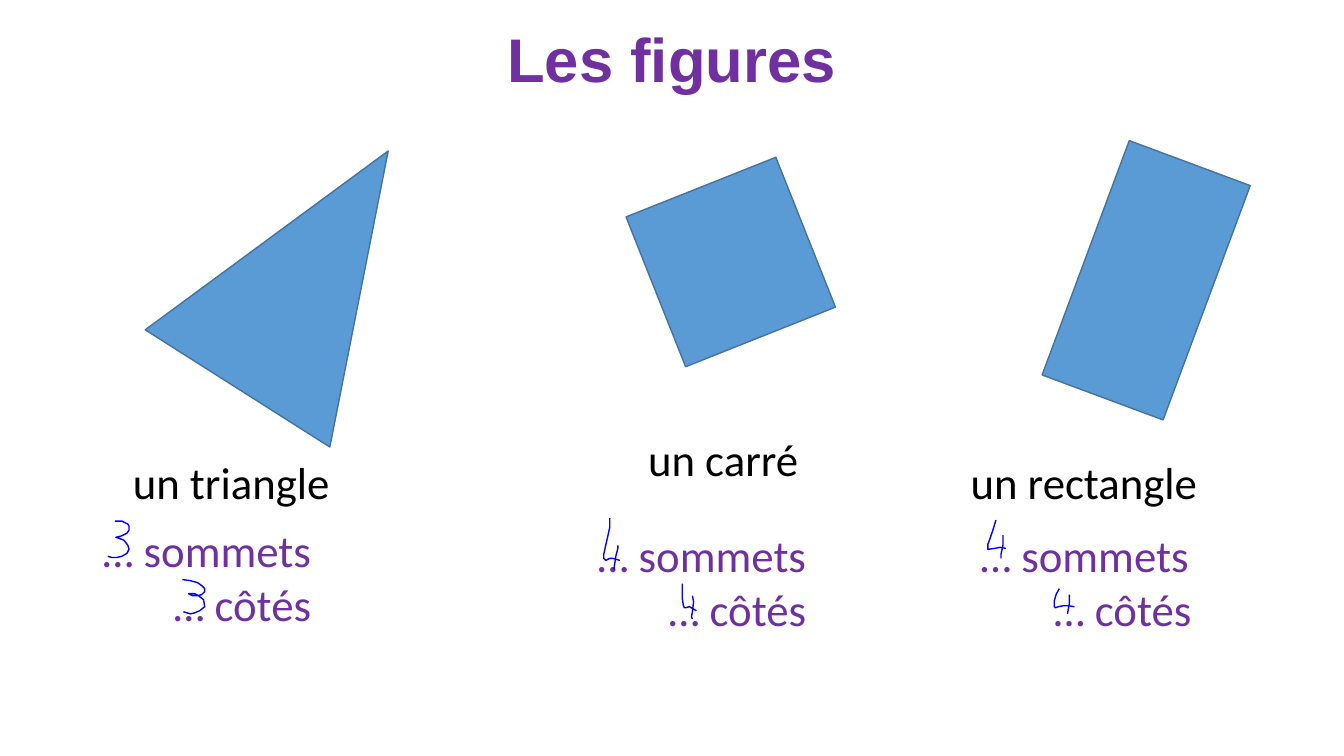
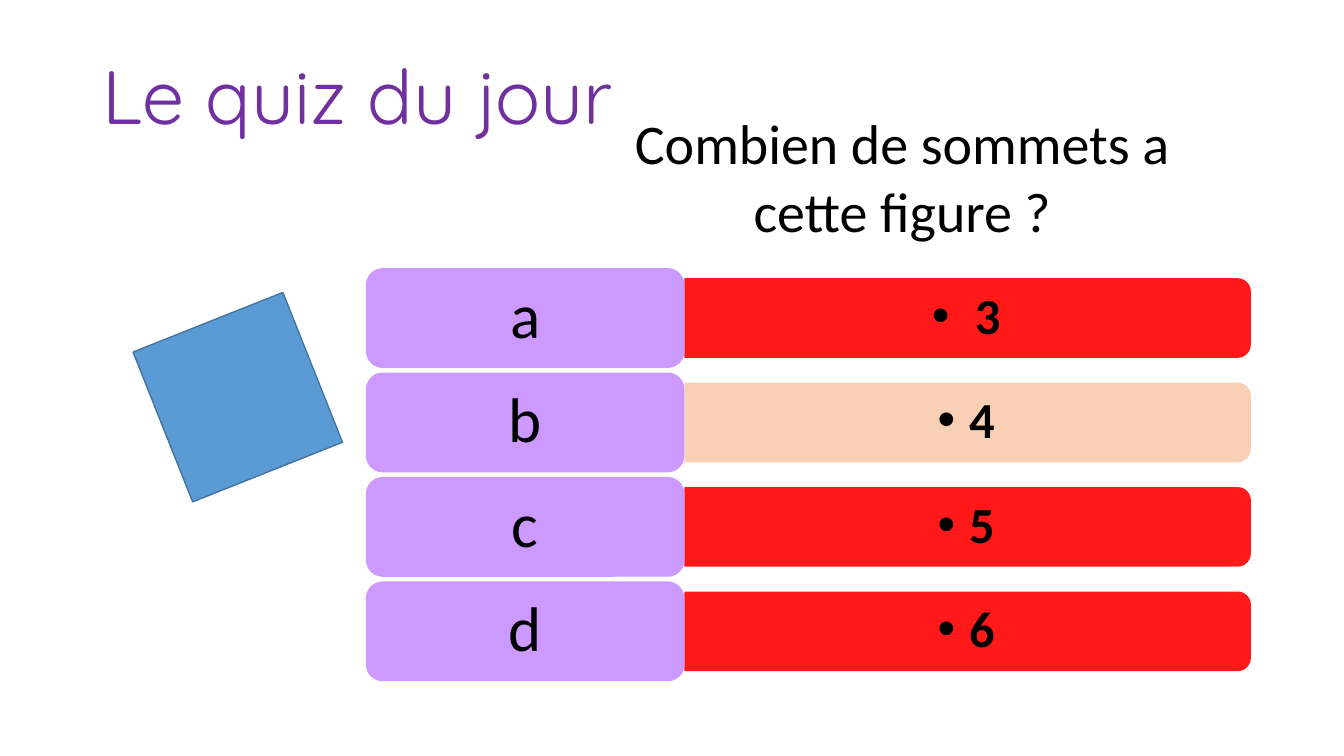
from lxml import etree
from pptx import Presentation
from pptx.dml.color import RGBColor
from pptx.enum import shapes, text
from pptx.oxml import ns
from pptx.util import Pt

PURPLE = RGBColor(0x70, 0x30, 0xA0)
BLACK = RGBColor(0x00, 0x00, 0x00)
BLUE = RGBColor(0x5B, 0x9B, 0xD5)
DARK_BLUE = RGBColor(0x43, 0x73, 0x9E)
INK = RGBColor(0x00, 0x00, 0xFF)
LILAC = RGBColor(0xCC, 0x99, 0xFF)
RED = RGBColor(0xFF, 0x00, 0x00)
PEACH = RGBColor(0xF8, 0xCB, 0xAD)

LEFT, CENTER, RIGHT = text.PP_ALIGN.LEFT, text.PP_ALIGN.CENTER, text.PP_ALIGN.RIGHT
MIDDLE = text.MSO_ANCHOR.MIDDLE
PRESET = shapes.MSO_SHAPE
TITLE_ONLY = 5
SQUARE_SIZE, SQUARE_ROTATION = 115.2, 338.3

# Name, its box, lines box, alignment of the first line
CAPTIONS = [
    ("un triangle", (87.8, 321.1, 157, 46), (66.2, 370.1), LEFT),
    ("un carré", (455.8, 304.6, 123.1, 46), (419.8, 373.7), LEFT),
    ("un rectangle", (686.2, 321.1, 177.8, 46), (691.2, 373.7), CENTER),
]

# Handwritten digits: a 3 is one stroke, a 4 is a hook and a bar
THREES = [
    [(82.1, 372.2), (87.1, 372.2), (91.4, 374.4), (92.2, 375.8), (92.2, 378.7),
     (90.7, 380.9), (86.4, 383), (82.8, 383.8), (85, 384.5), (88.6, 385.9),
     (91.4, 389.5), (92.2, 392.4), (90.7, 395.3), (87.1, 397.4), (83.5, 398.2),
     (79.9, 398.2), (77, 397.4)],
    [(130.3, 414), (135.4, 414.7), (141.1, 416.2), (144, 418.3), (146.2, 420.5),
     (146.2, 422.6), (144, 424.8), (141.1, 425.5), (137.5, 425.5), (134.6, 424.1),
     (139, 424.1), (141.8, 425.5), (145.4, 428.4), (146.2, 433.4), (142.6, 436.3),
     (139, 437.8), (136.1, 438.5), (131, 437)],
]
FOURS = [
    [(435.6, 370.1), (435.6, 376.6), (434.2, 383), (432.7, 389.5), (431.3, 396),
     (431.3, 398.9), (432.7, 400.3), (435.6, 398.9), (437.8, 398.9), (442.8, 400.3)],
    [(441.4, 389.5), (441.4, 391.7), (439.9, 397.4), (438.5, 406.8)],
    [(487.4, 416.9), (487.4, 427.7), (488.2, 432.7), (488.9, 434.2), (489.6, 434.2),
     (492.5, 433.4), (497.5, 436.3)],
    [(494.6, 425.5), (495.4, 429.8), (494.6, 437), (493.9, 440.6), (494.6, 442.1)],
    [(711.4, 371.5), (709.2, 378.7), (707, 385.2), (705.6, 388.8), (705.6, 392.4),
     (710.6, 391.7), (714.2, 391), (718.6, 391.7)],
    [(716.4, 382.3), (716.4, 389.5), (715, 396), (715, 398.9)],
    [(756.7, 420.5), (754.6, 424.1), (753.1, 429.1), (753.1, 433.4), (753.8, 434.2),
     (756, 433.4), (759.6, 432.7), (763.2, 432.7), (767.5, 433.4)],
    [(763.9, 424.8), (763.9, 430.6), (762.5, 438.5)],
]

ANSWERS = [("a", " 3", RED), ("b", "4", PEACH), ("c", "5", RED), ("d", "6", RED)]
ROW_TOP, ROW_PITCH, ROW_HEIGHT = 191.5, 74.6, 71.3
LETTER_LEFT, LETTER_WIDTH = 261.4, 227.5
BAR_WIDTH, BAR_HEIGHT = 404.6, 56.9


def points(*values):
    return [Pt(value) for value in values]


def write_text(shape, *lines, size, color=BLACK, font="Calibri", bold=False,
               align=(LEFT,), spacing=1.0, anchor=None, wrap=True):
    """Write one paragraph a line; align holds one value a line."""
    frame = shape.text_frame
    frame.word_wrap = wrap
    if anchor is not None:
        frame.vertical_anchor = anchor
    for index, (line, alignment) in enumerate(zip(lines, align)):
        paragraph = frame.add_paragraph() if index else frame.paragraphs[0]
        paragraph.alignment = alignment
        paragraph.line_spacing = spacing
        run = paragraph.add_run()
        run.text = line
        run.font.size = Pt(size)
        run.font.name = font
        run.font.bold = bold
        run.font.color.rgb = color
    return frame


def add_text(slide, box, *lines, **formatting):
    shape = slide.shapes.add_textbox(*points(*box))
    return write_text(shape, *lines, **formatting)


def add_titled_slide(presentation, title, box, **formatting):
    slide = presentation.slides.add_slide(presentation.slide_layouts[TITLE_ONLY])
    shape = slide.shapes.title
    shape.left, shape.top, shape.width, shape.height = points(*box)
    frame = write_text(shape, title, color=PURPLE, spacing=0.9, anchor=MIDDLE, **formatting)
    frame.auto_size = text.MSO_AUTO_SIZE.NONE
    return slide


def add_figure(slide, preset, box, fill, line=None, rotation=0):
    shape = slide.shapes.add_shape(preset, *points(*box))
    shape.shadow.inherit = False
    shape.rotation = rotation
    shape.fill.solid()
    shape.fill.fore_color.rgb = fill
    if line is None:
        shape.line.fill.background()
    else:
        shape.line.color.rgb = line
        shape.line.width = Pt(1)
    return shape


def add_square(slide, left, top):
    add_figure(slide, PRESET.RECTANGLE, (left, top, SQUARE_SIZE, SQUARE_SIZE),
               BLUE, DARK_BLUE, SQUARE_ROTATION)


def add_stroke(slide, stroke):
    start, *others = [points(*point) for point in stroke]
    builder = slide.shapes.build_freeform(*start)
    builder.add_line_segments(others, close=False)
    shape = builder.convert_to_shape()
    shape.shadow.inherit = False
    shape.fill.background()
    shape.line.color.rgb = INK
    shape.line.width = Pt(1)


def set_opacity(shape, percent):
    color = shape.fill._xPr.find(".//" + ns.qn("a:srgbClr"))
    etree.SubElement(color, ns.qn("a:alpha"), val=str(percent * 1000))


def add_bullet(paragraph, indent):
    properties = paragraph._p.get_or_add_pPr()
    properties.set("marL", str(Pt(indent)))
    properties.set("indent", str(-Pt(indent)))
    etree.SubElement(properties, ns.qn("a:buFont"), typeface="Arial")
    etree.SubElement(properties, ns.qn("a:buChar"), char="•")


def add_answer(slide, row, letter, answer, color):
    top = ROW_TOP + row * ROW_PITCH
    middle = top + ROW_HEIGHT / 2
    bar_left = LETTER_LEFT + LETTER_WIDTH
    bar_box = (bar_left + (BAR_WIDTH - BAR_HEIGHT) / 2, middle - BAR_WIDTH / 2,
               BAR_HEIGHT, BAR_WIDTH)
    bar = add_figure(slide, PRESET.ROUND_2_SAME_RECTANGLE, bar_box, color, rotation=90)
    set_opacity(bar, 90)

    frame = add_text(slide, (bar_left, middle - 25.6, 402.5, 51.2), answer, size=36,
                     bold=True, align=[CENTER], spacing=0.9, anchor=MIDDLE)
    frame.margin_left = frame.margin_right = Pt(10.8)
    frame.margin_top = frame.margin_bottom = Pt(5)
    add_bullet(frame.paragraphs[0], 22.5)

    label = add_figure(slide, PRESET.ROUNDED_RECTANGLE,
                       (LETTER_LEFT, top, LETTER_WIDTH, ROW_HEIGHT), LILAC)
    write_text(label, letter, size=45, align=[CENTER], spacing=0.9, anchor=MIDDLE)


def build_figures(presentation):
    slide = add_titled_slide(presentation, "Les figures", (103.7, -7.2, 752.4, 104.4),
                             size=44, font="Arial", bold=True, align=[CENTER])
    add_square(slide, 464.4, 129.6)
    add_figure(slide, PRESET.RECTANGLE, (772.6, 110.9, 92.2, 178.6), BLUE, DARK_BLUE, 20.4)
    add_figure(slide, PRESET.ISOSCELES_TRIANGLE, (145.4, 92.2, 156.2, 200.9),
               BLUE, DARK_BLUE, 32.4)
    for name, name_box, (left, top), alignment in CAPTIONS:
        add_text(slide, name_box, name, size=32, wrap=False)
        add_text(slide, (left, top, 167, 85), "… sommets", "… côtés", size=32,
                 color=PURPLE, align=[alignment, RIGHT], wrap=False)
    for stroke in THREES + FOURS:
        add_stroke(slide, stroke)


def build_quiz(presentation):
    slide = add_titled_slide(presentation, "Le quiz du jour", (66.2, 19.4, 828, 104.4),
                             size=54, font="Quicksand")
    for row, answer in enumerate(ANSWERS):
        add_answer(slide, row, *answer)
    add_text(slide, (439.2, 74.2, 410.4, 104.4), "Combien de sommets a cette figure ?",
             size=40, align=[CENTER])
    add_square(slide, 112.3, 226.1)


def main():
    presentation = Presentation()
    presentation.slide_width, presentation.slide_height = points(960, 540)
    build_figures(presentation)
    build_quiz(presentation)
    presentation.save("out.pptx")


if __name__ == "__main__":
    main()
